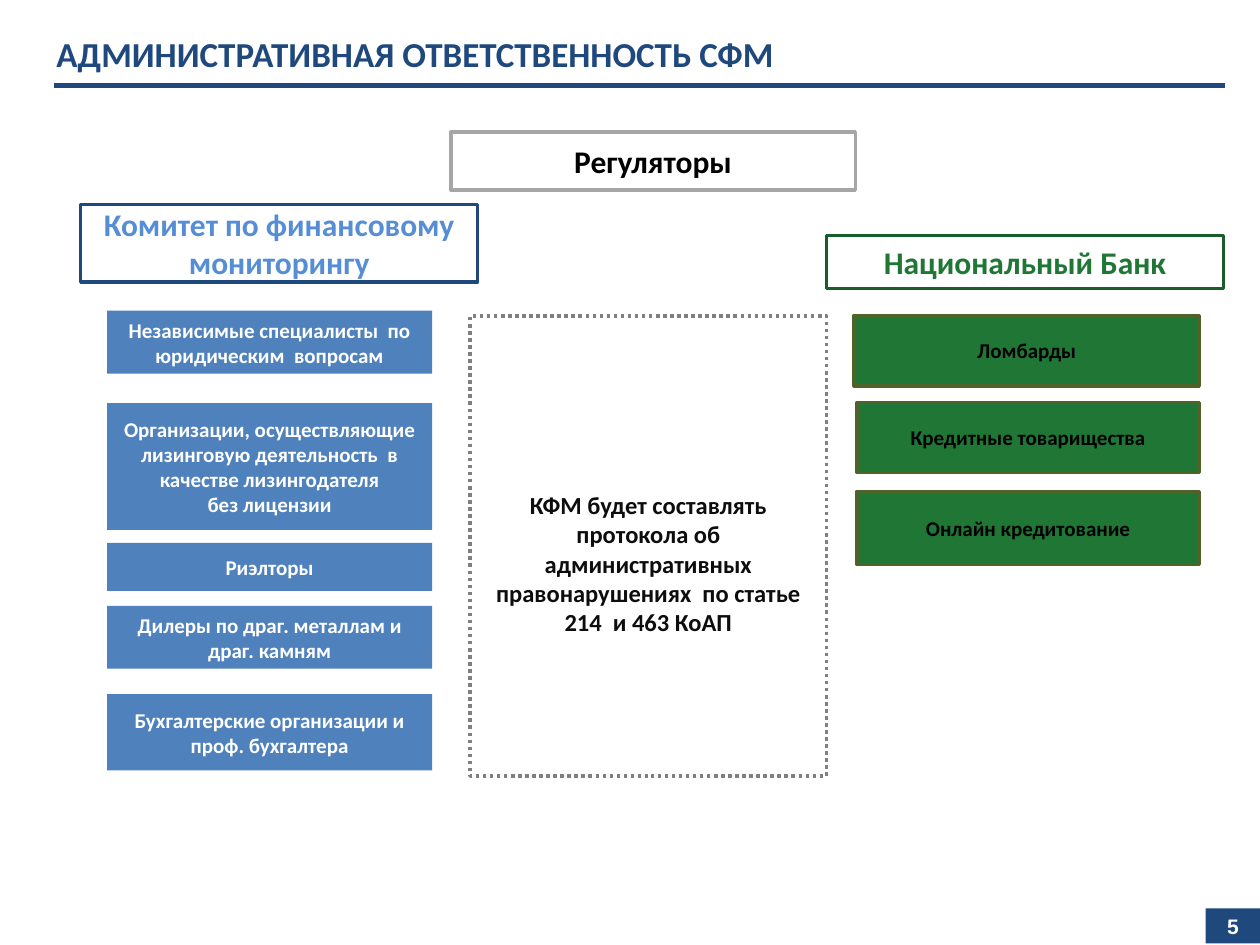
import pptx
import pptx.dml.color
import pptx.enum.dml
import pptx.enum.shapes
import pptx.enum.text
import pptx.oxml
import pptx.util
from dataclasses import dataclass

Pt = pptx.util.Pt


@dataclass(frozen=True)
class Theme:
    navy: str = "1F497D"
    blue: str = "4F81BD"
    light_blue: str = "558ED5"
    green: str = "207634"
    dark_green: str = "195D29"
    olive: str = "4F6228"
    silver: str = "A6A6A6"
    gray: str = "808080"
    white: str = "FFFFFF"
    black: str = "000000"
    ink: str = "0D0D0D"
    font: str = "Calibri"
    number_font: str = "Arial"
    title_size: int = 20
    heading_size: int = 18
    note_size: int = 14
    body_size: int = 12


class SlideBuilder:
    def __init__(self, slide, theme):
        self.slide = slide
        self.theme = theme

    def color(self, value):
        return pptx.dml.color.RGBColor.from_string(value)

    def set_text(self, shape, text, size, color, font=None, centered=True, top_inset=3.6):
        frame = shape.text_frame
        anchor = pptx.enum.text.MSO_ANCHOR
        frame_format = {
            "word_wrap": True,
            "vertical_anchor": anchor.MIDDLE if centered else anchor.TOP,
            "margin_top": Pt(top_inset),
        }
        for name, value in frame_format.items():
            setattr(frame, name, value)
        align = pptx.enum.text.PP_ALIGN
        font_format = {"name": font or self.theme.font, "size": Pt(size), "bold": True}
        frame.text = text
        for paragraph in frame.paragraphs:
            paragraph.alignment = align.CENTER if centered else align.LEFT
            for run in paragraph.runs:
                for name, value in font_format.items():
                    setattr(run.font, name, value)
                run.font.color.rgb = self.color(color)

    def title(self, bounds, text):
        shape = self.slide.shapes.add_textbox(*map(Pt, bounds))
        self.set_text(shape, text, self.theme.title_size, self.theme.navy, centered=False)

    def rule(self, left, right, top, color, width):
        connector = self.slide.shapes.add_connector(
            pptx.enum.shapes.MSO_CONNECTOR.STRAIGHT, Pt(left), Pt(top), Pt(right), Pt(top))
        connector.line.color.rgb = self.color(color)
        connector.line.width = Pt(width)
        properties = connector._element.spPr
        properties.append(pptx.oxml.parse_xml(
            '<a:effectLst xmlns:a="http://schemas.openxmlformats.org/drawingml/2006/main"/>'))

    def box(self, bounds, text, size, color, fill=None, border=None, dash=None, **text_format):
        shape = self.slide.shapes.add_shape(
            pptx.enum.shapes.MSO_SHAPE.RECTANGLE, *map(Pt, bounds))
        shape.shadow.inherit = False
        if fill:
            shape.fill.solid()
            shape.fill.fore_color.rgb = self.color(fill)
        else:
            shape.fill.background()
        if border:
            shape.line.color.rgb = self.color(border)
            shape.line.width = Pt(2)
            if dash:
                shape.line.dash_style = dash
        else:
            shape.line.fill.background()
        self.set_text(shape, text, size, color, **text_format)


def main():
    theme = Theme()
    presentation = pptx.Presentation()
    presentation.slide_width, presentation.slide_height = Pt(720), Pt(540)
    slide = presentation.slides.add_slide(presentation.slide_layouts[6])
    builder = SlideBuilder(slide, theme)

    # Title with its rule
    builder.title((25.2, 15.1, 674.6, 31.7), "АДМИНИСТРАТИВНАЯ ОТВЕТСТВЕННОСТЬ СФМ")
    builder.rule(31, 700, 48.8, theme.navy, 3)

    # Headings: all regulators, then one over each column
    headings = [
        ((257.6, 75.6, 231.2, 33.1), "Регуляторы", theme.black, theme.silver),
        ((472.3, 134.6, 226.9, 30.3), "Национальный Банк", theme.green, theme.dark_green),
        ((46.1, 116.8, 226.9, 44.4), "Комитет по финансовому мониторингу",
         theme.light_blue, theme.navy),
    ]
    for bounds, text, color, border in headings:
        builder.box(bounds, text, theme.heading_size, color, border=border)

    # Entities under the committee
    committee_entities = [
        (177.6, 36, "Независимые специалисты  по юридическим  вопросам"),
        (230.4, 72.5, "Организации, осуществляющие лизинговую деятельность  в "
                      "качестве лизингодателя\nбез лицензии"),
        (310.2, 27.4, "Риэлторы"),
        (346.2, 36, "Дилеры по драг. металлам и драг. камням"),
        (396.7, 43.6, "Бухгалтерские организации и проф. бухгалтера"),
    ]
    for top, height, text in committee_entities:
        builder.box((61.2, top, 185.8, height), text, theme.body_size, theme.white,
                    fill=theme.blue)

    # Entities under the bank, aligned on the right
    bank_right = 685.4
    bank_entities = [
        (180.2, 197.3, 40.3, "Ломбарды"),
        (230.1, 195.8, 39.9, "Кредитные товарищества"),
        (280.8, 195.8, 41.8, "Онлайн кредитование"),
    ]
    for top, width, height, text in bank_entities:
        builder.box((bank_right - width, top, width, height), text, theme.body_size,
                    theme.black, fill=theme.green, border=theme.olive)

    # Central note
    builder.box((268.6, 180.7, 203.8, 262.8),
                "КФМ будет составлять протокола об административных "
                "правонарушениях  по статье 214  и 463 КоАП",
                theme.note_size, theme.ink, fill=theme.white, border=theme.gray,
                dash=pptx.enum.dml.MSO_LINE.ROUND_DOT, top_inset=23)

    # Page number
    builder.box((689, 519.1, 31, 20), "5", theme.body_size, theme.white,
                fill=theme.navy, font=theme.number_font)

    presentation.save("out.pptx")


if __name__ == "__main__":
    main()
